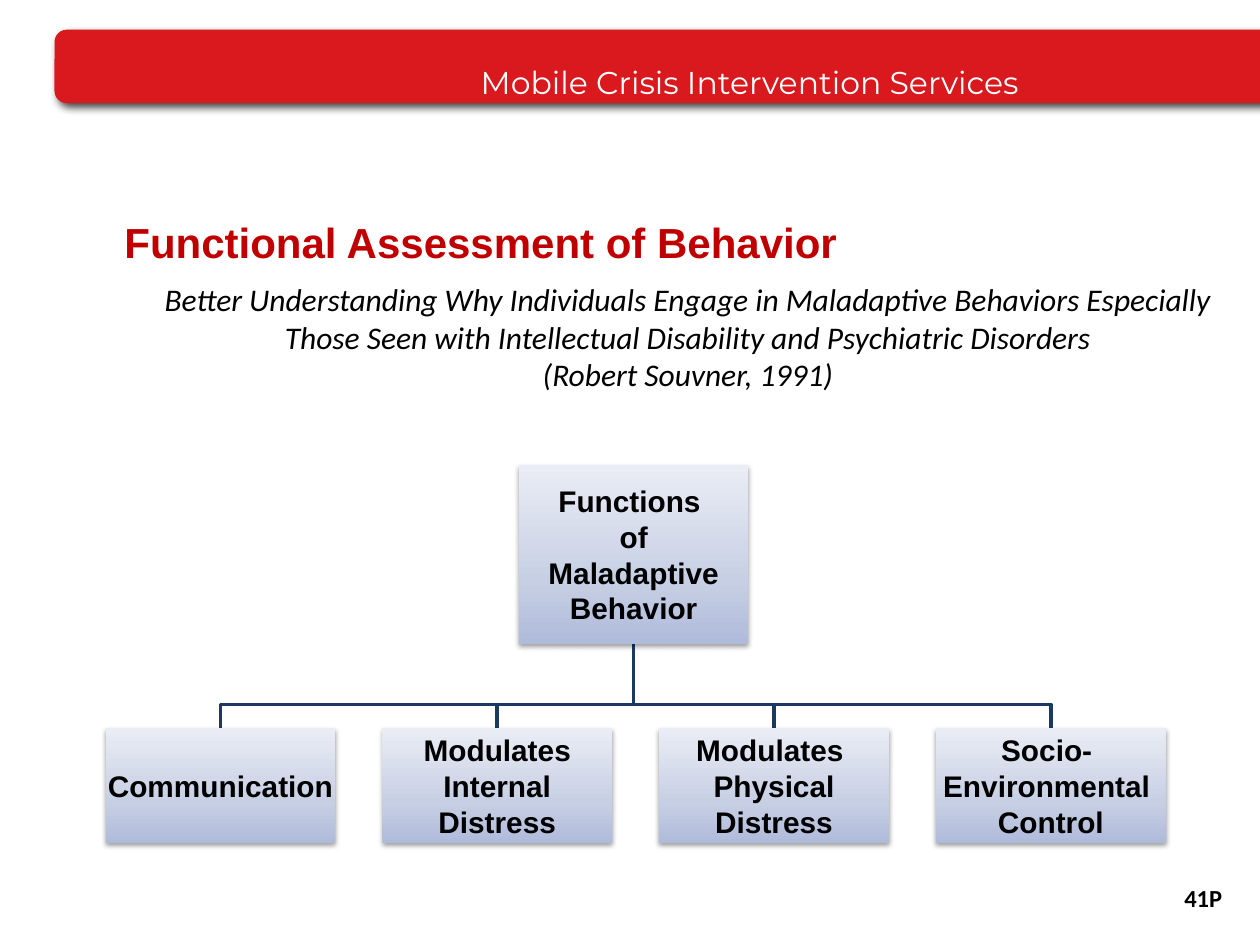
from copy import deepcopy
from dataclasses import dataclass

from lxml import etree
from pptx import Presentation
from pptx.dml.color import RGBColor
from pptx.enum.shapes import MSO_SHAPE
from pptx.enum.text import MSO_ANCHOR, PP_ALIGN
from pptx.oxml.ns import qn
from pptx.util import Cm, Pt

RECTANGLE, ROUNDED = MSO_SHAPE.RECTANGLE, MSO_SHAPE.ROUNDED_RECTANGLE
TOP, MIDDLE = MSO_ANCHOR.TOP, MSO_ANCHOR.MIDDLE
LEFT, CENTER, RIGHT = PP_ALIGN.LEFT, PP_ALIGN.CENTER, PP_ALIGN.RIGHT
TITLE_ONLY = 5


@dataclass(frozen=True)
class Style:
    font: str
    size: float
    color: str
    bold: bool = False
    italic: bool = False


@dataclass(frozen=True)
class Theme:
    banner: str = "D9191D"
    line: str = "193A64"
    shadow: str = "000000"
    gradient: tuple = ((0, "AFBBDA"), (0.35, "C7CFE4"), (1, "EAEDF5"))
    banner_text: Style = Style("Montserrat", 18, "FFFFFF")
    heading: Style = Style("Arial", 24, "C00000", bold=True)
    subtitle: Style = Style("Calibri", 18, "000000", italic=True)
    node: Style = Style("Arial", 17, "000000", bold=True)
    page_number: Style = Style("Calibri", 14, "000000", bold=True)


THEME = Theme()

ROOT = ("Functions ", "of", "Maladaptive", "Behavior")
FUNCTIONS = (
    ("Communication",),
    ("Modulates", "Internal", "Distress"),
    ("Modulates ", "Physical", "Distress"),
    ("Socio- ", "Environmental ", "Control"),
)
NODE_WIDTH = 4.63
ROOT_LEFT, ROOT_TOP, ROOT_HEIGHT = 10.46, 9.37, 3.61
ROW_LEFT, ROW_TOP, ROW_HEIGHT, ROW_STEP = 2.13, 14.68, 2.31, 5.58
BUS_TOP = 14.2


def rgb(value):
    return RGBColor.from_string(value)


def write(shape, lines, style, align, anchor, wrap=True):
    """Fill a shape with one paragraph per line, all in one style."""
    frame = shape.text_frame
    frame.word_wrap = wrap
    frame.vertical_anchor = anchor
    frame.text = "\n".join(lines)
    for para in frame.paragraphs:
        para.alignment = align
        font = para.font
        font.name, font.size = style.font, Pt(style.size)
        font.bold, font.italic = style.bold, style.italic
        font.color.rgb = rgb(style.color)
    return frame


def set_insets(frame, left, top, right, bottom):
    frame.margin_left, frame.margin_top = Cm(left), Cm(top)
    frame.margin_right, frame.margin_bottom = Cm(right), Cm(bottom)


def add_shadow(shape, alpha, blur, distance, angle):
    shape.shadow.inherit = False
    effects = shape._element.spPr.find(qn("a:effectLst"))
    outer = etree.SubElement(
        effects, qn("a:outerShdw"), blurRad=str(Pt(blur)), dist=str(Pt(distance)),
        dir=str(angle * 60000), algn="ctr", rotWithShape="0")
    color = etree.SubElement(outer, qn("a:srgbClr"), val=THEME.shadow)
    etree.SubElement(color, qn("a:alpha"), val=str(alpha * 1000))


def add_banner(page, text):
    banner = page.shapes.add_shape(ROUNDED, Cm(1.1), Cm(0.6), Cm(24.94), Cm(1.48))
    banner.fill.solid()
    banner.fill.fore_color.rgb = rgb(THEME.banner)
    banner.line.fill.background()
    add_shadow(banner, 75, 5, 3, 45)
    frame = write(banner, [text], THEME.banner_text, LEFT, TOP)
    set_insets(frame, 8.52, 0.69, 0, 0)
    frame.paragraphs[0].line_spacing = 0.9


def add_label(page, text, style, align, anchor, left, top, width, height):
    box = page.shapes.add_textbox(Cm(left), Cm(top), Cm(width), Cm(height))
    write(box, [text], style, align, anchor)


def format_title(page, text):
    title = page.shapes.title
    title.left, title.top = Cm(2.34), Cm(5.51)
    title.width, title.height = Cm(23.06), Cm(3.61)
    frame = write(title, [text], THEME.subtitle, CENTER, TOP)
    set_insets(frame, 0.5, 0.13, 0.5, 0.13)


def add_node(page, lines, left, top, height):
    node = page.shapes.add_shape(RECTANGLE, Cm(left), Cm(top), Cm(NODE_WIDTH), Cm(height))
    node.fill.gradient()
    node.fill.gradient_angle = 90
    stop_list = node._element.spPr.find(".//" + qn("a:gsLst"))
    stop_list.insert(1, deepcopy(stop_list[0]))
    for stop, (position, color) in zip(node.fill.gradient_stops, THEME.gradient):
        stop.position = position
        stop.color.rgb = rgb(color)
    node.line.fill.background()
    add_shadow(node, 38, 3.1, 1.6, 90)
    frame = write(node, lines, THEME.node, CENTER, MIDDLE, wrap=False)
    set_insets(frame, 0.03, 0.03, 0.03, 0.03)


def add_branch(page, child_left):
    """Draw the elbow line from the root box down to one child box."""
    start = ROOT_LEFT + NODE_WIDTH / 2
    end = child_left + NODE_WIDTH / 2
    points = ((start, BUS_TOP), (end, BUS_TOP), (end, ROW_TOP))
    builder = page.shapes.build_freeform(Cm(start), Cm(ROOT_TOP + ROOT_HEIGHT))
    builder.add_line_segments([(Cm(x), Cm(y)) for x, y in points], close=False)
    branch = builder.convert_to_shape()
    branch.fill.background()
    branch.line.color.rgb = rgb(THEME.line)
    branch.line.width = Pt(2)
    branch.shadow.inherit = False


def add_function_tree(page):
    lefts = [ROW_LEFT + ROW_STEP * index for index in range(len(FUNCTIONS))]
    for left in lefts:
        add_branch(page, left)
    add_node(page, ROOT, ROOT_LEFT, ROOT_TOP, ROOT_HEIGHT)
    for left, lines in zip(lefts, FUNCTIONS):
        add_node(page, lines, left, ROW_TOP, ROW_HEIGHT)


def main():
    deck = Presentation()
    deck.slide_width, deck.slide_height = Cm(25.4), Cm(19.05)
    page = deck.slides.add_slide(deck.slide_layouts[TITLE_ONLY])
    add_banner(page, "Mobile Crisis Intervention Services")
    add_label(page, "41P", THEME.page_number, RIGHT, MIDDLE, 13.46, 17.58, 11.43, 1.02)
    format_title(page, "Better Understanding Why Individuals Engage in Maladaptive "
                 "Behaviors Especially Those Seen with Intellectual Disability and "
                 "Psychiatric Disorders\v(Robert Souvner, 1991)")
    add_function_tree(page)
    add_label(page, "Functional Assessment of Behavior", THEME.heading, LEFT, TOP,
              2.26, 4.24, 19.89, 1.27)
    deck.save("out.pptx")


if __name__ == "__main__":
    main()
